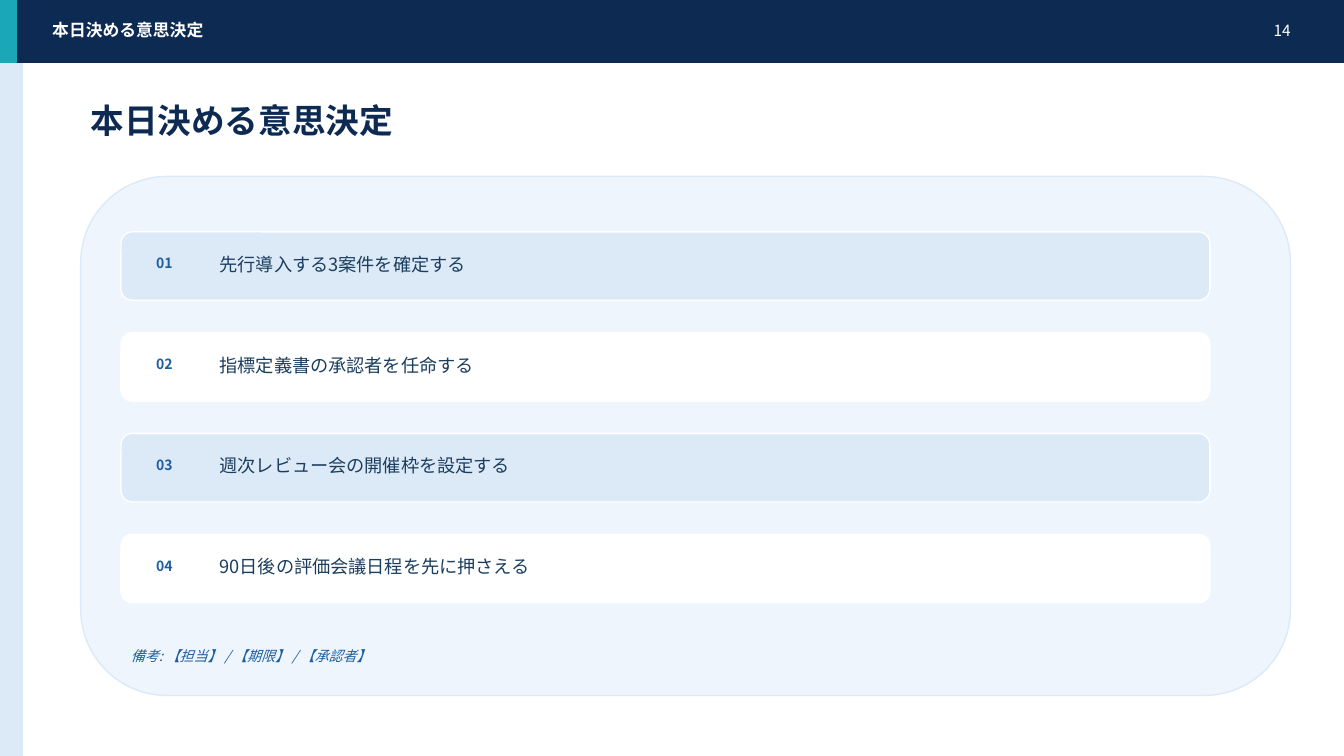
"""Build the slide that lists the decisions to make today."""
from dataclasses import dataclass

from lxml import etree
from pptx import Presentation
from pptx.dml.color import RGBColor
from pptx.enum.shapes import MSO_SHAPE
from pptx.enum.text import MSO_ANCHOR, PP_ALIGN
from pptx.oxml.ns import qn
from pptx.slide import Slide
from pptx.util import Emu, Pt

RECT = MSO_SHAPE.RECTANGLE
ROUND = MSO_SHAPE.ROUNDED_RECTANGLE
MIDDLE = MSO_ANCHOR.MIDDLE
LEFT = PP_ALIGN.LEFT
RIGHT = PP_ALIGN.RIGHT

SCALE = 9144
FONT = "Noto Sans CJK JP"
NAVY = "0D2A52"
TEAL = "1AA8B8"
PALE = "DCEAF7"
MIST = "EEF5FC"
WHITE = "FFFFFF"
BLUE = "1D5F9F"
INK = "1C3E5E"

TITLE = "本日決める意思決定"
TASKS = [
    "先行導入する3案件を確定する",
    "指標定義書の承認者を任命する",
    "週次レビュー会の開催枠を設定する",
    "90日後の評価会議日程を先に押さえる",
]
ROW_TOP = 230
ROW_STEP = 100


@dataclass(frozen=True)
class Box:
    left: int
    top: int
    width: int
    height: int

    def emu(self) -> tuple[Emu, ...]:
        sides = (self.left, self.top, self.width, self.height)
        return tuple(px(side) for side in sides)


@dataclass(frozen=True)
class Panel:
    box: Box
    fill: str
    line: str
    kind: MSO_SHAPE = RECT


@dataclass(frozen=True)
class Label:
    box: Box
    text: str
    size: int
    color: str
    bold: bool = False
    italic: bool = False
    align: PP_ALIGN = LEFT


def px(count: int) -> Emu:
    return Emu(count * SCALE)


def paint(code: str) -> RGBColor:
    return RGBColor.from_string(code)


def draw_panel(slide: Slide, panel: Panel) -> None:
    shape = slide.shapes.add_shape(panel.kind, *panel.box.emu())
    shape.shadow.inherit = False
    shape.fill.solid()
    shape.fill.fore_color.rgb = paint(panel.fill)
    shape.line.color.rgb = paint(panel.line)
    shape.line.width = Pt(1)


def draw_label(slide: Slide, label: Label) -> None:
    frame = slide.shapes.add_textbox(*label.box.emu()).text_frame
    frame.word_wrap = True
    frame.vertical_anchor = MIDDLE
    frame.text = label.text
    para = frame.paragraphs[0]
    para.alignment = label.align
    run = para.runs[0]
    font = run.font
    font.name = FONT
    font.size = Pt(label.size)
    font.bold = label.bold
    font.italic = label.italic
    font.color.rgb = paint(label.color)
    props = run._r.get_or_add_rPr()
    etree.SubElement(props, qn("a:ea"), typeface=FONT)


def draw_row(slide: Slide, index: int, task: str) -> None:
    top = ROW_TOP + index * ROW_STEP
    fill = WHITE if index % 2 else PALE
    draw_panel(slide, Panel(Box(120, top, 1080, 68), fill, WHITE, ROUND))
    number = f"{index + 1:02d}"
    draw_label(slide, Label(Box(145, top + 21, 44, 20), number, 10, BLUE, bold=True))
    draw_label(slide, Label(Box(208, top + 20, 960, 24), task, 13, INK))


PANELS = [
    Panel(Box(0, 55, 22, 695), PALE, PALE),
    Panel(Box(0, 0, 1333, 62), NAVY, NAVY),
    Panel(Box(0, 0, 16, 62), TEAL, TEAL),
    Panel(Box(80, 175, 1200, 515), MIST, PALE, ROUND),
]
LABELS = [
    Label(Box(42, 17, 880, 26), TITLE, 12, WHITE, bold=True),
    Label(Box(1215, 17, 75, 26), "14", 11, WHITE, align=RIGHT),
    Label(Box(80, 95, 1140, 48), TITLE, 24, NAVY, bold=True),
]
NOTE = Label(
    Box(120, 640, 680, 22),
    "備考: 【担当】 / 【期限】 / 【承認者】",
    10,
    BLUE,
    italic=True,
)


def main() -> None:
    deck = Presentation()
    deck.slide_width = px(1333)
    deck.slide_height = px(750)
    slide = deck.slides.add_slide(deck.slide_layouts[6])
    for panel in PANELS:
        draw_panel(slide, panel)
    for label in LABELS:
        draw_label(slide, label)
    for index, task in enumerate(TASKS):
        draw_row(slide, index, task)
    draw_label(slide, NOTE)
    deck.save("out.pptx")


if __name__ == "__main__":
    main()
